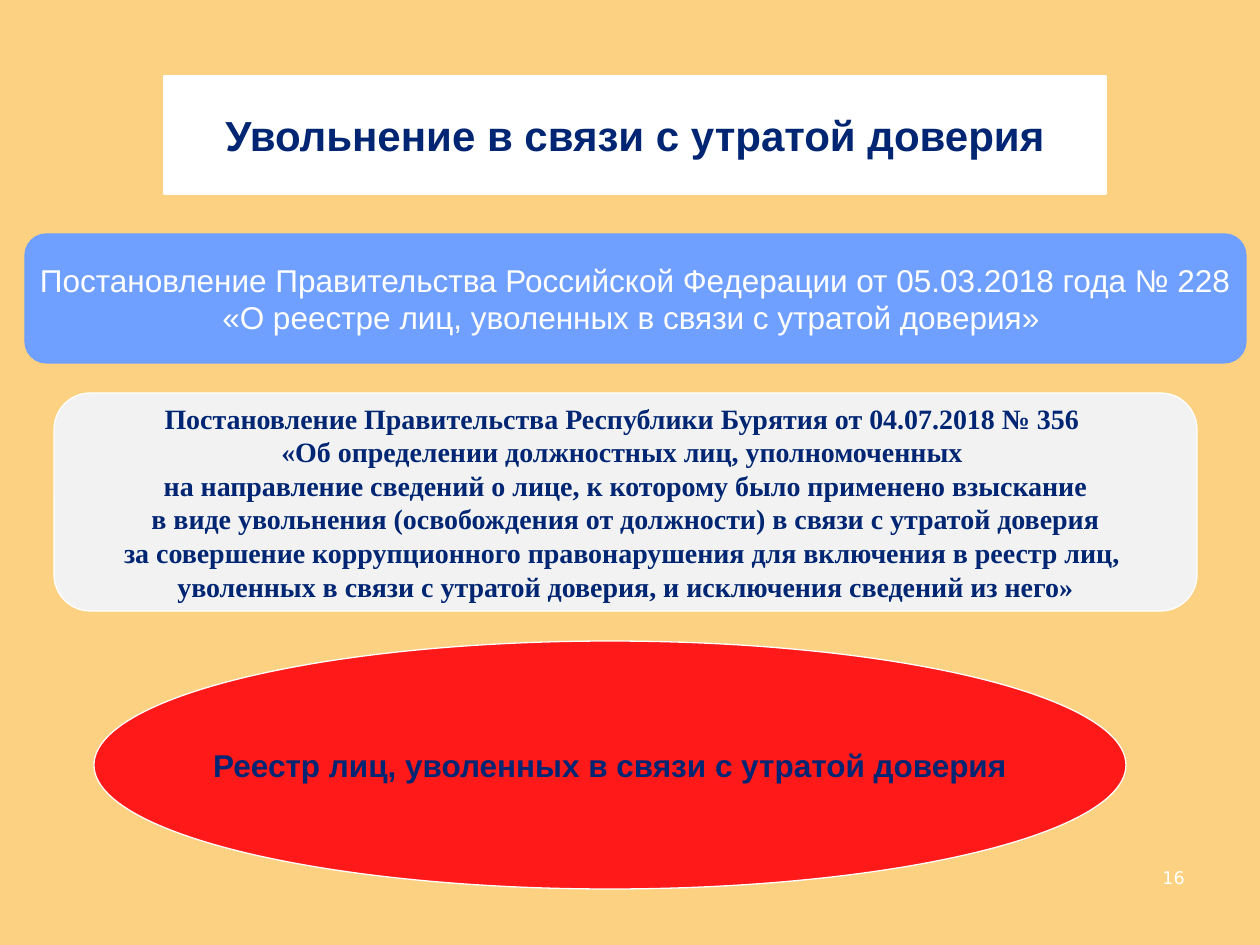
from dataclasses import dataclass

from pptx import Presentation
from pptx.dml.color import RGBColor
from pptx.enum.shapes import MSO_SHAPE
from pptx.enum.text import MSO_ANCHOR, PP_ALIGN
from pptx.util import Emu, Pt


@dataclass(frozen=True)
class Theme:
    background: str = "FCD181"
    white: str = "FFFFFF"
    navy: str = "002673"
    blue: str = "70A0FF"
    grey: str = "F2F2F2"
    red: str = "FF1919"
    sans: str = "Arial"
    serif: str = "Times New Roman"
    number_font: str = "DejaVu Sans"
    title: int = 24
    body: int = 18
    decree: int = 16
    number: int = 10
    outline: float = 0.75


def px(n):
    return Emu(round(n * 914400 / 126))


def write(tf, text, *, font, size, color, bold=False, align=PP_ALIGN.CENTER,
          anchor=MSO_ANCHOR.MIDDLE, wrap=False):
    tf.word_wrap = wrap
    tf.vertical_anchor = anchor
    for i, line in enumerate(text.split("\n")):
        p = tf.paragraphs[0] if i == 0 else tf.add_paragraph()
        p.alignment = align
        r = p.add_run()
        r.text = line
        r.font.name = font
        r.font.size = Pt(size)
        r.font.bold = bold
        r.font.color.rgb = RGBColor.from_string(color)


class SlideBuilder:
    """Adds styled elements to one slide, with lengths in px."""

    def __init__(self, slide, theme):
        self.s = slide
        self.theme = theme
        fill = slide.background.fill
        fill.solid()
        fill.fore_color.rgb = RGBColor.from_string(theme.background)

    def box(self, kind, bounds, text, *, fill, line, **style):
        sp = self.s.shapes.add_shape(kind, *map(px, bounds))
        sp.shadow.inherit = False
        sp.fill.solid()
        sp.fill.fore_color.rgb = RGBColor.from_string(fill)
        sp.line.color.rgb = RGBColor.from_string(line)
        sp.line.width = Pt(self.theme.outline)
        write(sp.text_frame, text, **style)

    def label(self, bounds, text, **style):
        sp = self.s.shapes.add_textbox(*map(px, bounds))
        write(sp.text_frame, text, wrap=True, anchor=MSO_ANCHOR.TOP, **style)


def main():
    t = Theme()
    prs = Presentation()
    prs.slide_width, prs.slide_height = px(1260), px(945)
    s = SlideBuilder(prs.slides.add_slide(prs.slide_layouts[6]), t)

    s.label((903, 861, 294, 63), "16", font=t.number_font, size=t.number,
            color=t.white, align=PP_ALIGN.RIGHT)
    s.box(MSO_SHAPE.RECTANGLE, (164, 76, 942, 118),
          "Увольнение в связи с утратой доверия",
          fill=t.white, line=t.white,
          font=t.sans, size=t.title, color=t.navy, bold=True)
    s.box(MSO_SHAPE.ROUNDED_RECTANGLE, (25, 234, 1221, 129),
          "Постановление Правительства Российской Федерации от 05.03.2018 года № 228\n"
          "«О реестре лиц, уволенных в связи с утратой доверия» ",
          fill=t.blue, line=t.blue,
          font=t.sans, size=t.body, color=t.white)
    s.box(MSO_SHAPE.ROUNDED_RECTANGLE, (54, 393, 1143, 218),
          "Постановление Правительства Республики Бурятия от 04.07.2018 № 356 \n"
          "«Об определении должностных лиц, уполномоченных \n"
          "на направление сведений о лице, к которому было применено взыскание\n"
          " в виде увольнения (освобождения от должности) в связи с утратой доверия \n"
          "за совершение коррупционного правонарушения для включения в реестр лиц, \n"
          "уволенных в связи с утратой доверия, и исключения сведений из него»",
          fill=t.grey, line=t.white,
          font=t.serif, size=t.decree, color=t.navy, bold=True)
    s.box(MSO_SHAPE.OVAL, (94, 641, 1032, 248),
          "Реестр лиц, уволенных в связи с утратой доверия",
          fill=t.red, line=t.white,
          font=t.sans, size=t.body, color=t.navy, bold=True)

    prs.save("out.pptx")


if __name__ == "__main__":
    main()
